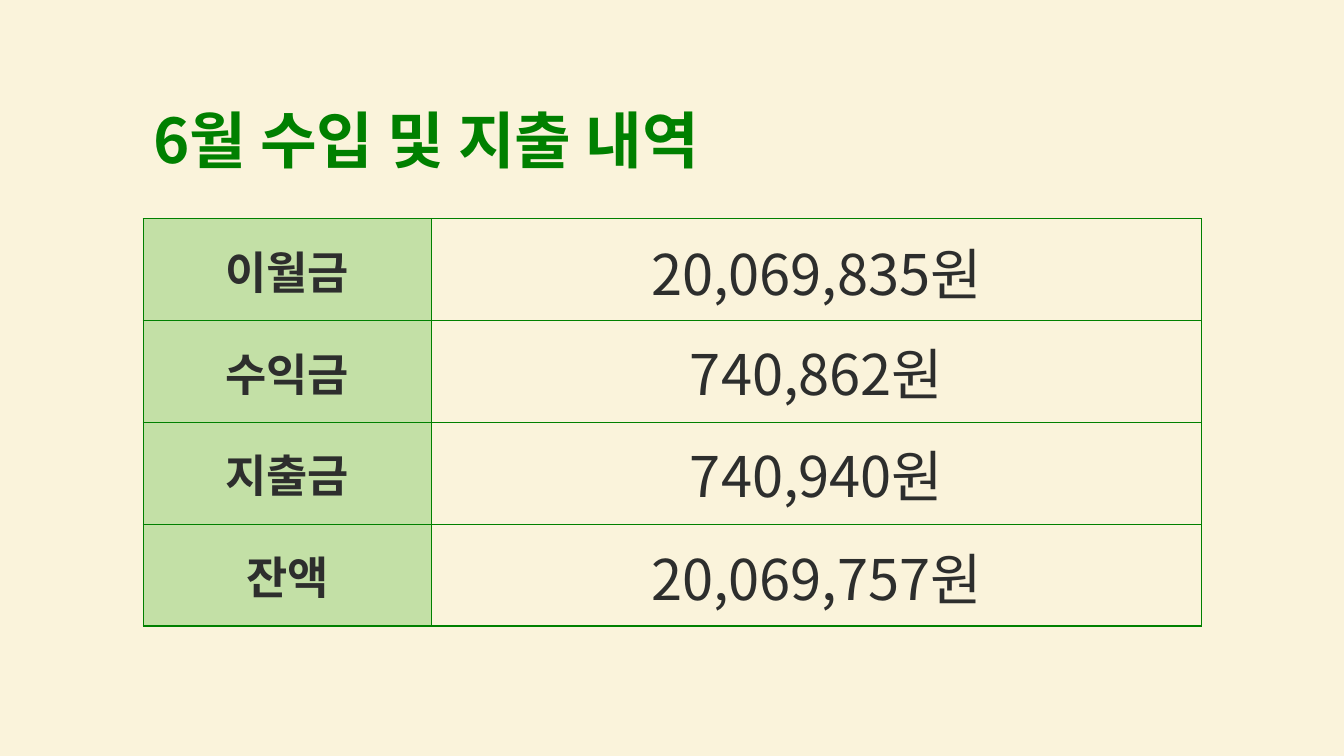
"""Build the slide of June income and spending."""
from lxml import etree
from pptx import Presentation
from pptx.dml.color import RGBColor
from pptx.enum.text import MSO_ANCHOR, PP_ALIGN
from pptx.oxml.ns import qn
from pptx.util import Inches, Pt

CENTER = PP_ALIGN.CENTER
MIDDLE = MSO_ANCHOR.MIDDLE
BOTTOM = MSO_ANCHOR.BOTTOM
CREAM = RGBColor(0xFA, 0xF3, 0xDB)
GREEN = RGBColor(0x00, 0x80, 0x00)
LIGHT_GREEN = RGBColor(0xC3, 0xE0, 0xA6)
CHARCOAL = RGBColor(0x2D, 0x2E, 0x2D)
FONT = "Noto Sans CJK KR"
LEFT, WIDTH = 1.42, 10.5
LABEL_WIDTH = 2.86
ROW_HEIGHT = 1.01
ACCOUNTS = [
    ("이월금", "20,069,835원"),
    ("수익금", "740,862원"),
    ("지출금", "740,940원"),
    ("잔액", "20,069,757원"),
]


def write(frame, text, size, color, bold):
    frame.text = text
    para = frame.paragraphs[0]
    span = para.runs[0]
    span.font.size = Pt(size)
    span.font.bold = bold
    span.font.color.rgb = color
    span.font.name = FONT
    etree.SubElement(span.font._element, qn("a:ea"), typeface=FONT)
    return para


def add_borders(cell):
    properties = cell._tc.get_or_add_tcPr()
    for side in ("a:lnL", "a:lnR", "a:lnT", "a:lnB"):
        line = etree.SubElement(properties, qn(side), w=str(Pt(1)))
        fill = etree.SubElement(line, qn("a:solidFill"))
        etree.SubElement(fill, qn("a:srgbClr"), val=str(GREEN))


deck = Presentation()
deck.slide_width = Inches(13.33)
deck.slide_height = Inches(7.5)
page = deck.slides.add_slide(deck.slide_layouts[6])
page.background.fill.solid()
page.background.fill.fore_color.rgb = CREAM

title_box = page.shapes.add_textbox(Inches(LEFT), Inches(0.55), Inches(WIDTH), Inches(1.25))
title_box.text_frame.word_wrap = True
title_box.text_frame.vertical_anchor = BOTTOM
title = write(title_box.text_frame, "6월 수입 및 지출 내역", 44, GREEN, True)
title.line_spacing = 0.9

table = page.shapes.add_table(
    len(ACCOUNTS), 2, Inches(LEFT), Inches(2.17),
    Inches(WIDTH), Inches(ROW_HEIGHT * len(ACCOUNTS)),
).table
table.first_row = False
table.horz_banding = False
table.columns[0].width = Inches(LABEL_WIDTH)
table.columns[1].width = Inches(WIDTH - LABEL_WIDTH)

for row, (label, amount) in enumerate(ACCOUNTS):
    label_cell, amount_cell = table.cell(row, 0), table.cell(row, 1)
    for cell, text, size, bold in (
        (label_cell, label, 32, True),
        (amount_cell, amount, 40, False),
    ):
        para = write(cell.text_frame, text, size, CHARCOAL, bold)
        para.alignment = CENTER
        cell.vertical_anchor = MIDDLE
        add_borders(cell)
    label_cell.fill.solid()
    label_cell.fill.fore_color.rgb = LIGHT_GREEN
    amount_cell.fill.background()

for row in (0, len(ACCOUNTS) - 1):
    table.cell(row, 1).text_frame.paragraphs[0].line_spacing = 1.03

deck.save("out.pptx")
